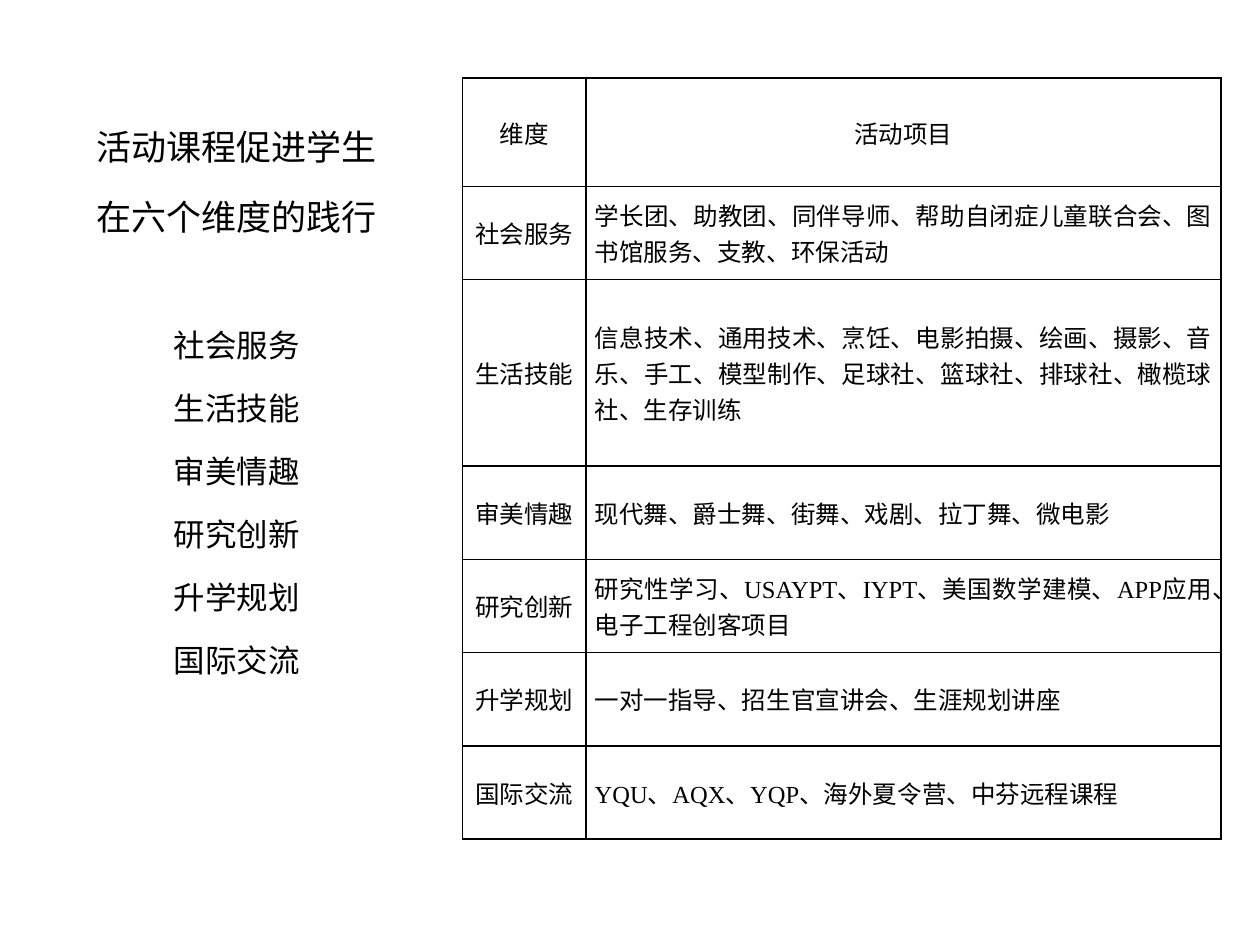
from lxml.etree import SubElement
from pptx import Presentation
from pptx.dml.color import RGBColor
from pptx.enum.text import MSO_ANCHOR as Anchor, PP_ALIGN as Align
from pptx.oxml.ns import qn
from pptx.util import Inches, Pt

CJK_FONT, LATIN_FONT = "Noto Sans CJK SC", "Times New Roman"
BLACK = "000000"
HEADING = ["活动课程促进学生", "在六个维度的践行"]
HEADER = ("维度", "活动项目")
ACTIVITIES = {
    "社会服务": "学长团、助教团、同伴导师、帮助自闭症儿童联合会、图书馆服务、支教、环保活动",
    "生活技能": "信息技术、通用技术、烹饪、电影拍摄、绘画、摄影、音乐、手工、模型制作、足球社、篮球社、排球社、橄榄球社、生存训练",
    "审美情趣": "现代舞、爵士舞、街舞、戏剧、拉丁舞、微电影",
    "研究创新": "研究性学习、USAYPT、IYPT、美国数学建模、APP应用、电子工程创客项目",
    "升学规划": "一对一指导、招生官宣讲会、生涯规划讲座",
    "国际交流": "YQU、AQX、YQP、海外夏令营、中芬远程课程",
}
COLUMN_WIDTHS = (0.98, 5.04)
ROW_HEIGHT, HEADER_HEIGHT = 0.74, 0.86
TALL_ROW = "生活技能"


def color(value):
    return RGBColor.from_string(value)


def add_run(paragraph, text, size, latin):
    run = paragraph.add_run()
    run.text = text
    run.font.size = Pt(size)
    run.font.name = latin
    run.font.color.rgb = color(BLACK)
    SubElement(run._r.get_or_add_rPr(), qn("a:ea"), typeface=CJK_FONT)


def add_borders(cell):
    properties = cell._tc.get_or_add_tcPr()
    for position, side in enumerate(("lnL", "lnR", "lnT", "lnB")):
        line = properties.makeelement(qn(f"a:{side}"), {"w": str(Pt(1))})
        fill = SubElement(line, qn("a:solidFill"))
        SubElement(fill, qn("a:srgbClr"), val=BLACK)
        properties.insert(position, line)


def add_outline(slide):
    box = slide.shapes.add_textbox(Inches(0.16), Inches(0.78), Inches(3.44), Inches(5.92))
    frame = box.text_frame
    frame.word_wrap = True
    lines = [(text, 20) for text in HEADING] + [(text, 18) for text in ACTIVITIES]
    for index, (text, size) in enumerate(lines):
        paragraph = frame.add_paragraph() if index else frame.paragraphs[0]
        paragraph.alignment = Align.CENTER
        paragraph.line_spacing = 1.5
        if index:
            group_gap = 36 if index == len(HEADING) else 0
            paragraph.space_before = Pt(size * 0.2 + group_gap)
        add_run(paragraph, text, size, CJK_FONT)


def add_activity_table(slide):
    rows = [HEADER, *ACTIVITIES.items()]
    heights = [HEADER_HEIGHT] + [ROW_HEIGHT * (2 if name == TALL_ROW else 1) for name in ACTIVITIES]
    frame = slide.shapes.add_table(
        len(rows), len(HEADER), Inches(3.67), Inches(0.62),
        Inches(sum(COLUMN_WIDTHS)), Inches(sum(heights)))
    table = frame.table
    table.first_row = table.horz_banding = False
    for column, width in zip(table.columns, COLUMN_WIDTHS):
        column.width = Inches(width)
    for row_index, (texts, height) in enumerate(zip(rows, heights)):
        table.rows[row_index].height = Inches(height)
        for column_index, text in enumerate(texts):
            cell = table.cell(row_index, column_index)
            cell.fill.background()
            cell.vertical_anchor = Anchor.MIDDLE
            cell.margin_left = cell.margin_right = Inches(0.07)
            cell.margin_top = cell.margin_bottom = 0
            add_borders(cell)
            paragraph = cell.text_frame.paragraphs[0]
            paragraph.alignment = Align.JUSTIFY if row_index and column_index else Align.CENTER
            add_run(paragraph, text, 14, LATIN_FONT)


def main():
    """Build the slide on the six dimensions of activity courses."""
    presentation = Presentation()
    presentation.slide_width, presentation.slide_height = Inches(10), Inches(7.5)
    slide = presentation.slides.add_slide(presentation.slide_layouts[6])
    add_outline(slide)
    add_activity_table(slide)
    presentation.save("out.pptx")


if __name__ == "__main__":
    main()
